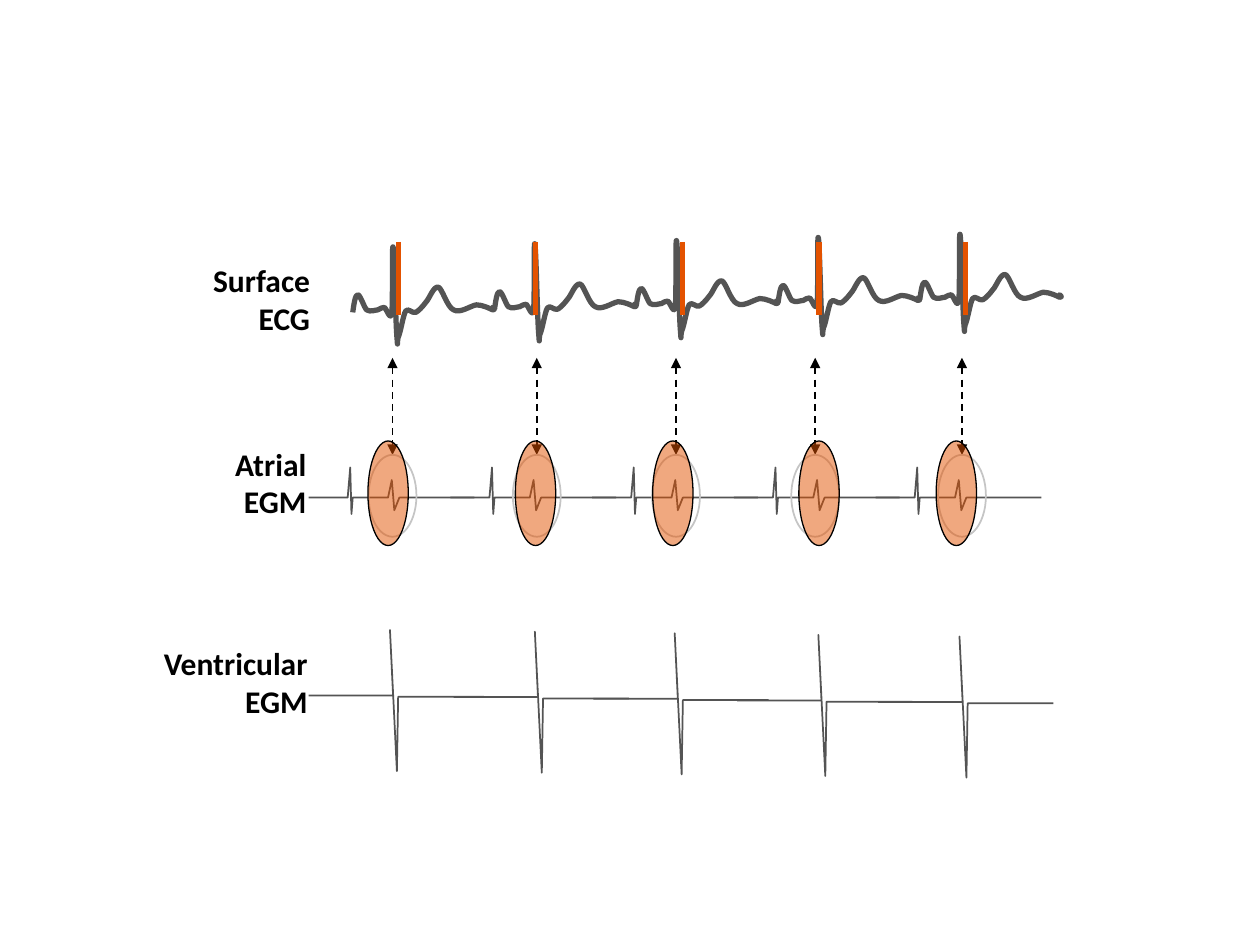
from lxml.etree import SubElement
from pptx import Presentation
from pptx.dml.color import RGBColor
from pptx.enum.dml import MSO_LINE
from pptx.enum.shapes import MSO_CONNECTOR, MSO_SHAPE
from pptx.enum.text import MSO_AUTO_SIZE, PP_ALIGN
from pptx.oxml.ns import qn
from pptx.util import Inches, Pt

COLUMNS, ROWS = 100, 75
SLIDE_WIDTH, SLIDE_HEIGHT = Inches(10), Inches(7.5)
BLACK = RGBColor(0x00, 0x00, 0x00)
TRACE_GRAY = RGBColor(0x54, 0x54, 0x54)
RING_GRAY = RGBColor(0xC5, 0xC5, 0xC5)
ORANGE = RGBColor(0xE3, 0x52, 0x00)
FONT = "Calibri"

BEATS = 5
BEAT_STEP = 11.25

LABELS = [
    ("Surface\nECG", 15.8, 20.2, 9.8),
    ("Atrial\nEGM", 17.4, 34.8, 7.9),
    ("Ventricular\nEGM", 11.9, 50.6, 13.5),
]
ECG_START = (28, 24.8)
ECG_CURVES = [
    ((28.1, 24.1), (28.2, 23.4), (28.4, 23.4)),
    ((28.6, 23.4), (28.9, 24.4), (29.1, 24.6)),
    ((29.4, 24.8), (29.8, 24.6), (30, 24.6)),
    ((30.2, 24.5), (30.3, 24.4), (30.5, 24.4)),
    ((30.7, 24.5), (31, 25.6), (31.1, 24.8)),
    ((31.2, 24), (31.1, 19.3), (31.2, 19.6)),
    ((31.3, 19.9), (31.4, 25.5), (31.5, 26.7)),
    ((31.6, 27.9), (31.5, 27.1), (31.6, 26.8)),
    ((31.8, 26.4), (32, 25), (32.2, 24.7)),
    ((32.4, 24.4), (32.7, 24.9), (33, 24.8)),
    ((33.2, 24.7), (33.5, 24.4), (33.8, 24)),
    ((34.1, 23.7), (34.4, 22.7), (34.8, 22.8)),
    ((35.1, 22.9), (35.5, 24.4), (36, 24.6)),
    ((36.5, 24.9), (37.3, 24.3), (37.8, 24.2)),
    ((38.3, 24.2), (38.9, 24.5), (39.1, 24.6)),
    ((39.4, 24.6), (39.1, 24.4), (39.1, 24.4)),
    ((39.1, 24.4), (39.1, 24.5), (39.1, 24.5)),
]
ATRIAL_BEAT = [(0, 0), (3.1, 0), (3.3, -2.4), (3.4, 1.3), (3.5, 0),
               (6.3, 0), (6.6, -1.4), (6.8, 1), (7.2, 0), (13.15, 0)]
VENTRICULAR_BEAT = [(0, 0), (6.7, 0), (6.45, -5.2), (7, 6), (7.1, 0.1), (13.9, 0.1)]
VENTRICULAR_COLUMNS = [24.5, 36, 47.1, 58.5, 69.7]
ARROW_COLUMNS = [31.15, 42.6, 53.65, 64.7, 76.35]
HIGHLIGHT_COLUMNS = [29.2, 40.9, 51.8, 63.4, 74.3]
MARKER_COLUMNS = [31.65, 42.5, 54.15, 65, 76.65]


def across(columns):
    return round(SLIDE_WIDTH * columns / COLUMNS)


def down(rows):
    return round(SLIDE_HEIGHT * rows / ROWS)


def style_line(shape, color, width):
    shape.line.color.rgb = color
    shape.line.width = Pt(width)


def add_trace(slide, points, left, top, width):
    vertices = [(across(left + x), down(top + y)) for x, y in points]
    builder = slide.shapes.build_freeform(*vertices[0])
    builder.add_line_segments(vertices[1:], close=False)
    trace = builder.convert_to_shape()
    trace.shadow.inherit = False
    trace.fill.background()
    style_line(trace, TRACE_GRAY, width)
    SubElement(trace.line._get_or_add_ln(), qn("a:round"))
    return trace


def bend_segments(trace):
    segments = list(trace._element.iter(qn("a:lnTo")))
    outline = segments[0].getparent()
    for first in range(0, len(segments), 3):
        curve = SubElement(outline, qn("a:cubicBezTo"))
        for segment in segments[first:first + 3]:
            curve.append(segment[0])
            outline.remove(segment)


def add_label(slide, text, left, top, width):
    box = slide.shapes.add_textbox(across(left), down(top), across(width), down(7.1))
    text_frame = box.text_frame
    text_frame.word_wrap = False
    text_frame.auto_size = MSO_AUTO_SIZE.SHAPE_TO_FIT_TEXT
    text_frame.text = text
    for paragraph in text_frame.paragraphs:
        paragraph.alignment = PP_ALIGN.RIGHT
        for run in paragraph.runs:
            run.font.name = FONT
            run.font.size = Pt(18)
            run.font.bold = True
            run.font.color.rgb = BLACK


def add_vertical_line(slide, column, top, bottom, color, width):
    line = slide.shapes.add_connector(
        MSO_CONNECTOR.STRAIGHT, across(column), down(top), across(column), down(bottom))
    style_line(line, color, width)
    SubElement(line._element.spPr, qn("a:effectLst"))
    return line


def add_double_arrow(slide, column):
    arrow = add_vertical_line(slide, column, 28.4, 36.1, BLACK, 1)
    arrow.line.dash_style = MSO_LINE.DASH
    for end in ("a:headEnd", "a:tailEnd"):
        SubElement(arrow.line._get_or_add_ln(), qn(end), type="triangle")


def add_ellipse(slide, left, top, width, height, color, line_width):
    ellipse = slide.shapes.add_shape(
        MSO_SHAPE.OVAL, across(left), down(top), across(width), down(height))
    ellipse.shadow.inherit = False
    ellipse.fill.background()
    style_line(ellipse, color, line_width)
    return ellipse


def add_highlight(slide, left):
    highlight = add_ellipse(slide, left, 35, 3.2, 8.3, BLACK, 0.75)
    highlight.fill.solid()
    highlight.fill.fore_color.rgb = ORANGE
    color = highlight._element.spPr.find(qn("a:solidFill"))[0]
    SubElement(color, qn("a:alpha"), val="50000")


def main():
    presentation = Presentation()
    presentation.slide_width = SLIDE_WIDTH
    presentation.slide_height = SLIDE_HEIGHT
    slide = presentation.slides.add_slide(presentation.slide_layouts[6])

    ecg_beat = [ECG_START] + [point for curve in ECG_CURVES for point in curve]
    for beat in range(BEATS):
        bend_segments(add_trace(slide, ecg_beat, beat * BEAT_STEP, beat * -0.25, 3))
    for label in LABELS[1:]:
        add_label(slide, *label)
    for beat, column in enumerate(VENTRICULAR_COLUMNS):
        add_trace(slide, VENTRICULAR_BEAT, column, 55.2 + beat * 0.13, 1)
    add_label(slide, *LABELS[0])
    for beat in range(BEATS):
        add_trace(slide, ATRIAL_BEAT, 24.5 + beat * BEAT_STEP, 39.5, 1)
    for column in ARROW_COLUMNS:
        add_double_arrow(slide, column)
        add_ellipse(slide, column - 1.9, 36.1, 3.8, 6.5, RING_GRAY, 1)
    for column in HIGHLIGHT_COLUMNS:
        add_highlight(slide, column)
    for column in MARKER_COLUMNS:
        add_vertical_line(slide, column, 19.2, 25, ORANGE, 3)

    presentation.save("out.pptx")


if __name__ == "__main__":
    main()
